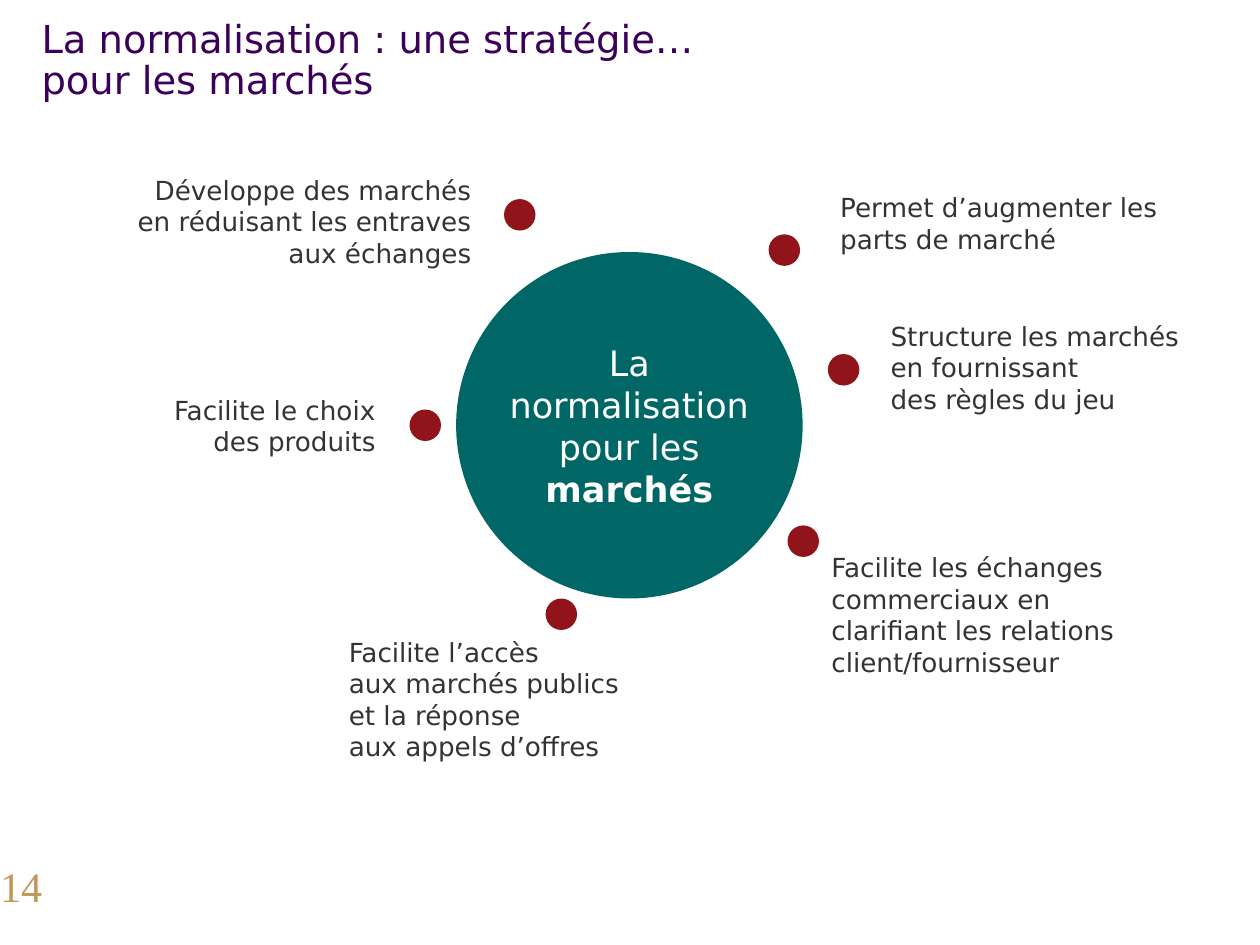
from copy import deepcopy

from pptx import Presentation
from pptx.dml import color
from pptx.enum import shapes, text
from pptx.oxml import ns
from pptx.util import Inches, Pt

SANS = "DejaVu Sans"
PURPLE, TEAL, RED = "3C005A", "006666", "91141A"
GREY, GOLD, WHITE = "333333", "C3965A", "FFFFFF"
LEFT, CENTER, RIGHT = text.PP_ALIGN.LEFT, text.PP_ALIGN.CENTER, text.PP_ALIGN.RIGHT
TOP, MIDDLE, BOTTOM = text.MSO_ANCHOR.TOP, text.MSO_ANCHOR.MIDDLE, text.MSO_ANCHOR.BOTTOM
DOT_SIZE = 0.25

BENEFITS = [
    ((4, 1.58), (0.42, 1.33, 3.42, 0.85), RIGHT,
     "Développe des marchés\ven réduisant les entraves\vaux échanges"),
    ((3.25, 3.25), (1.25, 3.08, 1.83, 0.6), RIGHT,
     "Facilite le choix des produits"),
    ((6.1, 1.86), (6.57, 1.47, 2.75, 0.6), LEFT,
     "Permet d’augmenter les parts de marché"),
    ((6.57, 2.81), (6.97, 2.49, 2.75, 0.85), LEFT,
     "Structure les marchés en fournissant\vdes règles du jeu"),
    ((6.25, 4.17), (6.5, 4.33, 2.58, 1.1), LEFT,
     "Facilite les échanges commerciaux en clarifiant les relations client/fournisseur"),
    ((4.33, 4.75), (2.67, 5, 2.67, 1.1), LEFT,
     "Facilite l’accès\vaux marchés publics\vet la réponse\vaux appels d’offres"),
]


def rgb(value):
    return color.RGBColor.from_string(value)


def set_attributes(target, values):
    for name, value in values.items():
        setattr(target, name, value)


def format_run(run, size, colour, font=SANS, bold=False):
    set_attributes(run.font, {"size": Pt(size), "name": font, "bold": bold})
    run.font.color.rgb = rgb(colour)


def write_text(shape, wording, size, colour, font=SANS, align=LEFT, anchor=TOP,
               insets=(0, 0), auto_size=text.MSO_AUTO_SIZE.NONE):
    horizontal, vertical = map(Inches, insets)
    frame = shape.text_frame
    set_attributes(frame, {
        "word_wrap": True, "auto_size": auto_size, "vertical_anchor": anchor,
        "margin_left": horizontal, "margin_right": horizontal,
        "margin_top": vertical, "margin_bottom": vertical,
    })
    paragraph = frame.paragraphs[0]
    paragraph.text = wording
    paragraph.alignment = align
    for run in paragraph.runs:
        format_run(run, size, colour, font)
    run_format = paragraph.runs[0].font._element
    for line_break in paragraph._p.findall(ns.qn("a:br")):
        line_break.append(deepcopy(run_format))
    return paragraph


def add_title(slide, box, wording):
    title = slide.shapes.title
    names = ("left", "top", "width", "height")
    set_attributes(title, dict(zip(names, map(Inches, box))))
    paragraph = write_text(title, wording, 22, PURPLE)
    paragraph.line_spacing = 0.9


def add_label(slide, box, wording, size, colour, **options):
    label = slide.shapes.add_textbox(*map(Inches, box))
    write_text(label, wording, size, colour, **options)


def add_circle(slide, left, top, diameter, colour):
    circle = slide.shapes.add_shape(
        shapes.MSO_SHAPE.OVAL, *map(Inches, (left, top, diameter, diameter)))
    circle.shadow.inherit = False
    circle.fill.solid()
    circle.fill.fore_color.rgb = rgb(colour)
    circle.line.fill.background()
    return circle


def add_hub(slide):
    hub = add_circle(slide, 3.62, 2, 2.75, TEAL)
    paragraph = write_text(hub, "La normalisation pour les ", 20, WHITE,
                           align=CENTER, anchor=MIDDLE)
    emphasis = paragraph.add_run()
    emphasis.text = "marchés"
    format_run(emphasis, 20, WHITE, bold=True)


def add_benefit(slide, dot, box, align, wording):
    add_circle(slide, *dot, DOT_SIZE, RED)
    add_label(slide, box, wording, 15, GREY, align=align, insets=(0.1, 0.05),
              auto_size=text.MSO_AUTO_SIZE.SHAPE_TO_FIT_TEXT)


def main():
    presentation = Presentation()
    presentation.slide_width = Inches(10)
    presentation.slide_height = Inches(7.5)
    slide = presentation.slides.add_slide(presentation.slide_layouts[5])
    add_title(slide, (0.33, 0.16, 7.25, 0.66),
              "La normalisation : une stratégie…\vpour les marchés")
    add_label(slide, (0, 6.73, 0.81, 0.5), "14", 24, GOLD,
              font="Times New Roman", anchor=BOTTOM)
    add_hub(slide)
    for benefit in BENEFITS:
        add_benefit(slide, *benefit)
    presentation.save("out.pptx")


if __name__ == "__main__":
    main()
